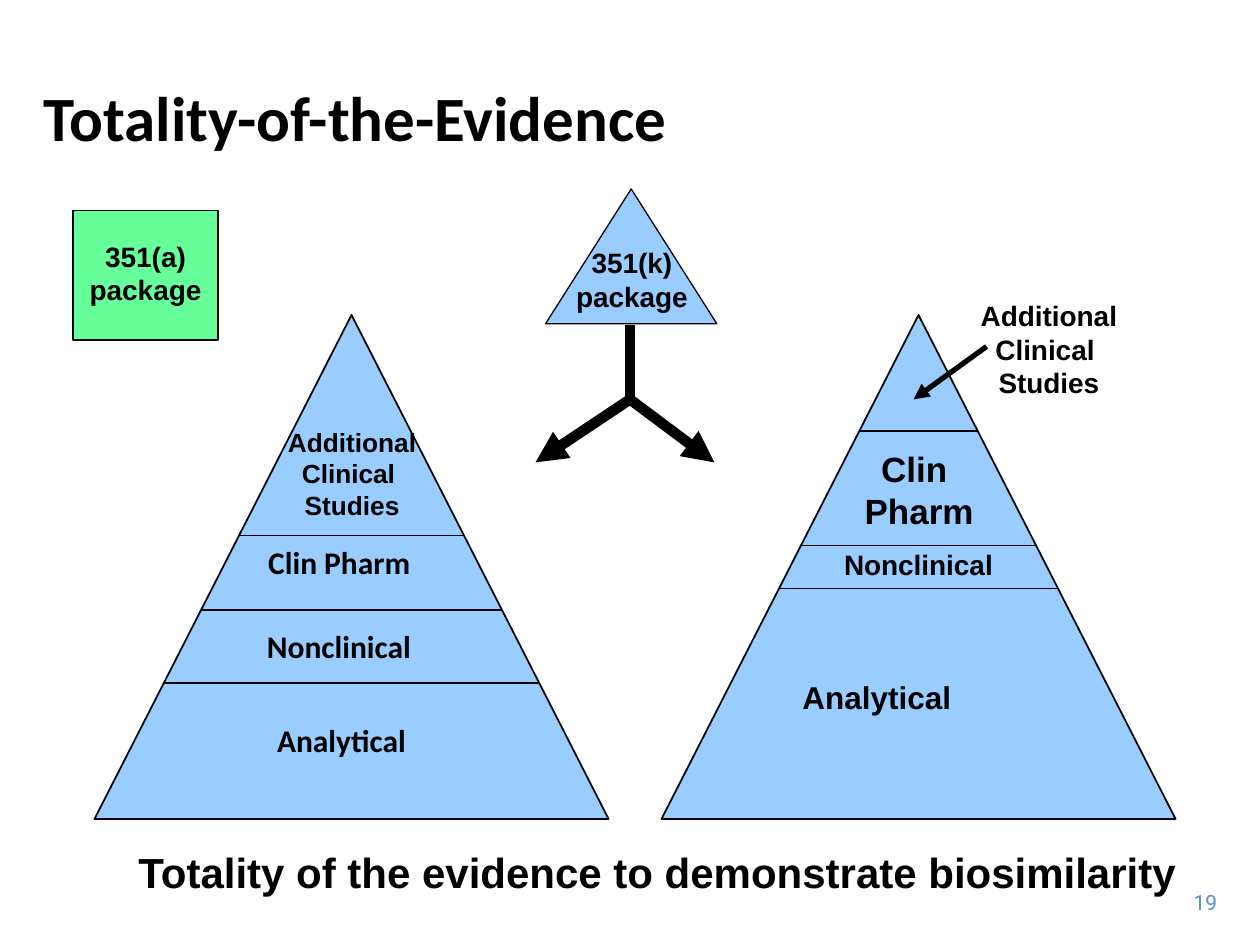
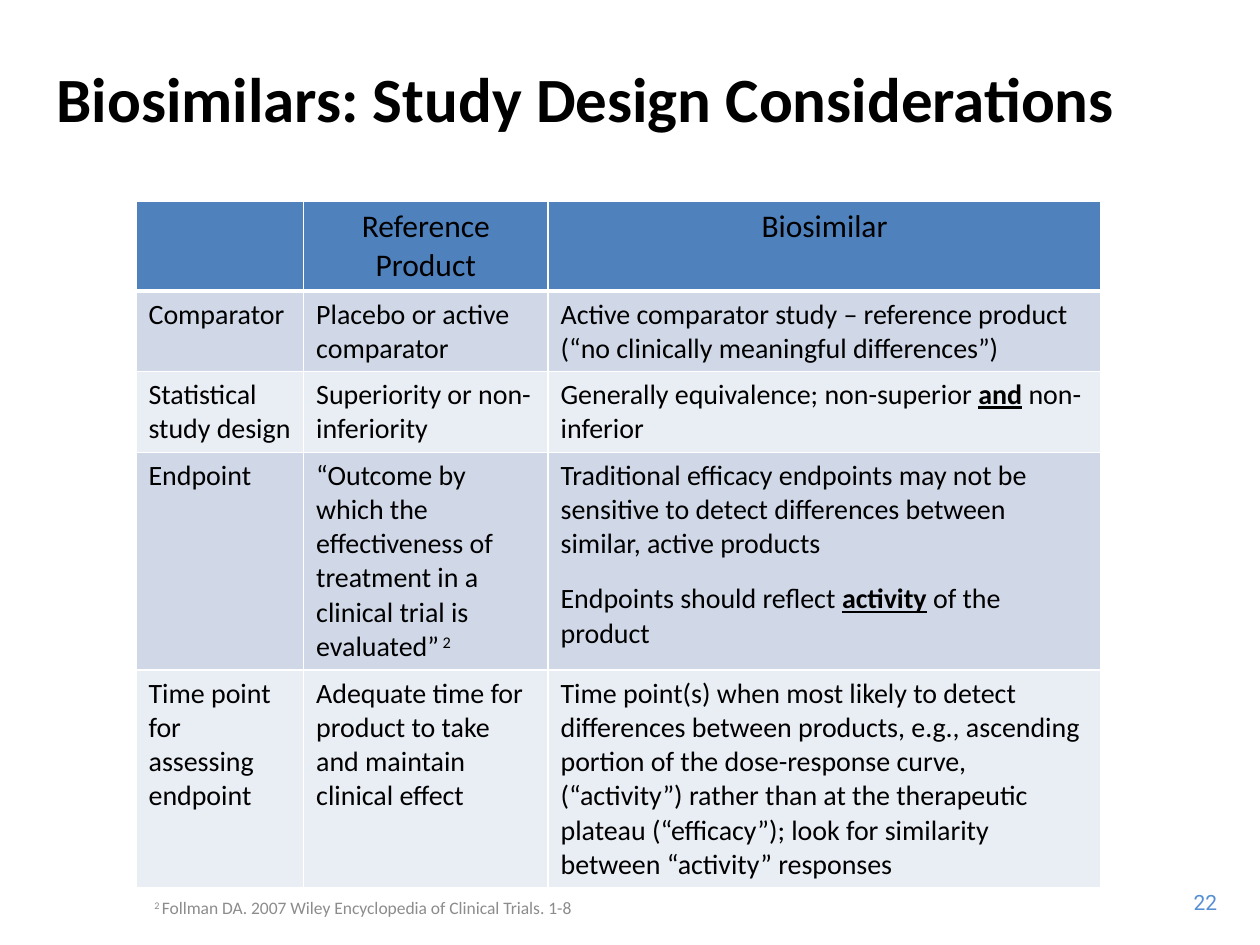
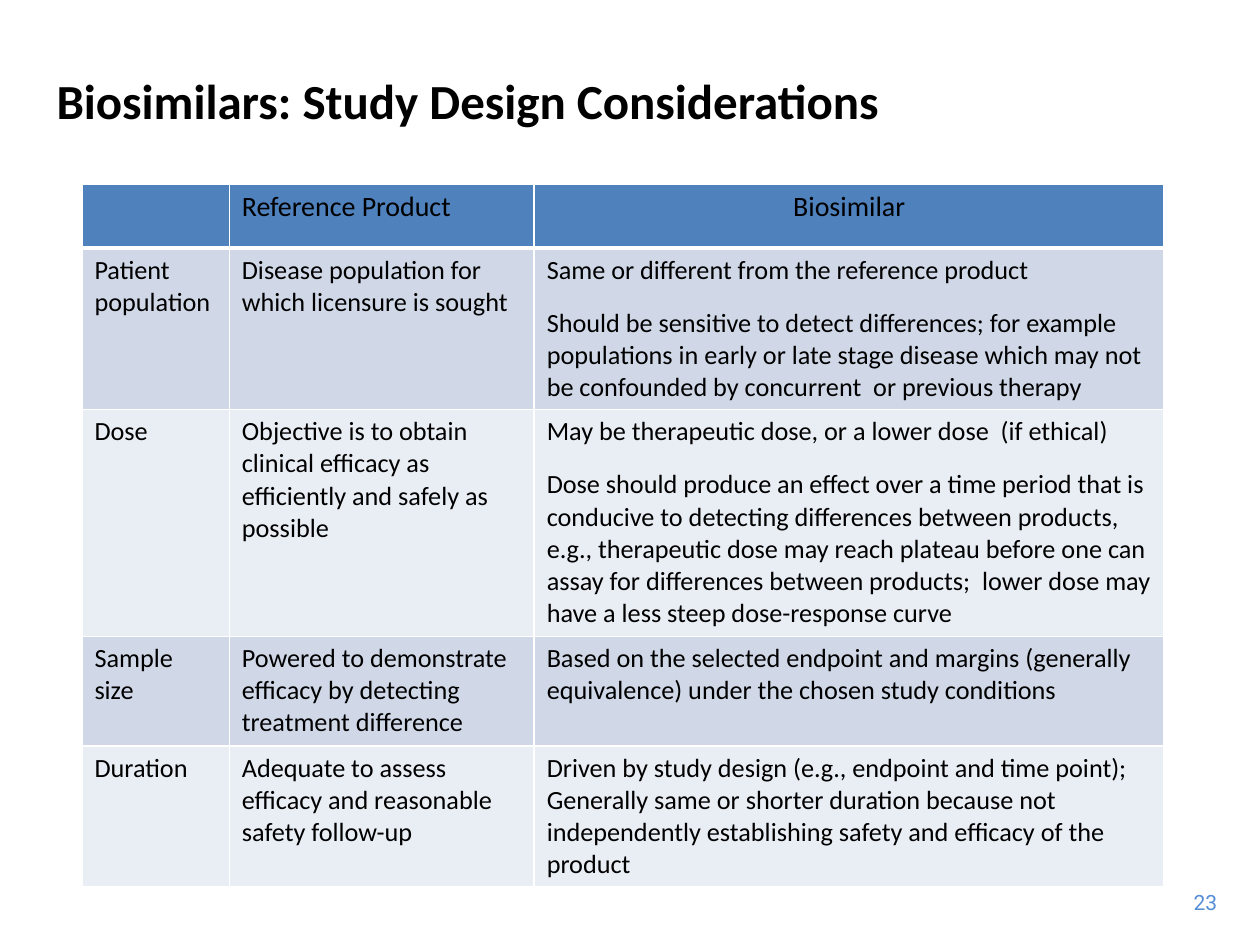
"""Build three slides on biosimilar evidence and study design."""
from dataclasses import dataclass

from lxml.etree import SubElement
from pptx import Presentation
from pptx.dml.color import RGBColor
from pptx.enum.shapes import MSO_CONNECTOR, MSO_SHAPE
from pptx.enum.text import MSO_ANCHOR, MSO_AUTO_SIZE, PP_ALIGN
from pptx.oxml import parse_xml
from pptx.oxml.ns import nsdecls, qn
from pptx.util import Inches, Pt


@dataclass(frozen=True)
class Theme:
    ink: str = "000000"
    blue: str = "99CCFF"
    green: str = "66FF99"
    head: str = "4F81BD"
    bands: tuple = ("D0D8E8", "E9EDF4")
    rule: str = "FFFFFF"
    page: str = "558ED5"
    note: str = "8C8C8C"
    sans: str = "Arial"
    body: str = "Calibri"
    digit: str = "Roboto"
    title: int = 36
    small: int = 28
    claim: int = 24
    large: int = 20
    mid: int = 18
    label: int = 16
    tight: int = 15
    foot: int = 12
    cite: int = 10


T = Theme()
LEFT, MID, RIGHT = PP_ALIGN.LEFT, PP_ALIGN.CENTER, PP_ALIGN.RIGHT


def paint(par, text, size, face, color=T.ink, bold=False, align=LEFT):
    """Write text where *word* is stressed and ^mark^ is raised."""
    par.alignment = align
    font = par.font
    font.size, font.name, font.bold = Pt(size), face, bold
    font.color.rgb = RGBColor.from_string(color)
    for i, piece in enumerate(text.split("*")):
        for j, part in enumerate(piece.split("^")):
            if not part:
                continue
            run = par.add_run()
            run.text = part
            if i % 2:
                run.font.bold = run.font.underline = True
            if j % 2:
                run.font._element.set("baseline", "30000")


def write(frame, text, size, face, gap=0, **style):
    """Write one paragraph for each line of text."""
    for i, line in enumerate(text.split("\n")):
        par = frame.add_paragraph() if i else frame.paragraphs[0]
        if i and gap:
            par.space_before = Pt(gap)
        paint(par, line, size, face, **style)


def label(slide, box, text, size, face=T.sans, bold=True, **style):
    """Add a text box that grows with its lines."""
    frame = slide.shapes.add_textbox(*map(Inches, box)).text_frame
    frame.word_wrap = False
    frame.auto_size = MSO_AUTO_SIZE.SHAPE_TO_FIT_TEXT
    write(frame, text, size, face, bold=bold, **style)


def panel(slide, box, text, size, **style):
    """Add a wrapped text box anchored in the middle."""
    frame = slide.shapes.add_textbox(*map(Inches, box)).text_frame
    frame.word_wrap = True
    frame.vertical_anchor = MSO_ANCHOR.MIDDLE
    write(frame, text, size, T.body, **style)


def shape(slide, kind, box, color, width=0.75):
    """Add an outlined preset shape."""
    item = slide.shapes.add_shape(kind, *map(Inches, box))
    item.shadow.inherit = False
    item.fill.solid()
    item.fill.fore_color.rgb = RGBColor.from_string(color)
    item.line.color.rgb = RGBColor.from_string(T.ink)
    item.line.width = Pt(width)


def line(slide, start, end, width=1, arrow=False):
    """Add a straight line, with an arrowhead if asked."""
    item = slide.shapes.add_connector(
        MSO_CONNECTOR.STRAIGHT, *map(Inches, start + end))
    item.line.color.rgb = RGBColor.from_string(T.ink)
    item.line.width = Pt(width)
    if arrow:
        SubElement(item.line._get_or_add_ln(), qn("a:tailEnd"), type="triangle")
    SubElement(item._element.spPr, qn("a:effectLst"))


def pyramid(slide, left, cuts):
    """Add a triangle sliced by level lines at the given heights."""
    top, wide, high = 2.5, 4.08, 4
    shape(slide, MSO_SHAPE.ISOSCELES_TRIANGLE, (left, top, wide, high), T.blue, 1)
    axis = left + wide / 2
    for y in cuts:
        half = (y - top) / high * wide / 2
        line(slide, (axis - half, y), (axis + half, y))


def edge(cell, bottom):
    """Draw the rules around a cell."""
    props = cell._tc.get_or_add_tcPr()
    for i, side in enumerate("LRTB"):
        width = Pt(bottom if side == "B" else 1)
        props.insert(i, parse_xml(
            f'<a:ln{side} {nsdecls("a")} w="{width}"><a:solidFill>'
            f'<a:srgbClr val="{T.rule}"/></a:solidFill></a:ln{side}>'))


def grid(slide, spot, cols, highs, rows, sizes, aligns):
    """Add a banded table with a header row."""
    table = slide.shapes.add_table(
        len(rows), len(cols), *map(Inches, (*spot, sum(cols), sum(highs)))).table
    table.first_row = table.horz_banding = False
    for col, wide in zip(table.columns, cols):
        col.width = Inches(wide)
    for r, (texts, high) in enumerate(zip(rows, highs)):
        table.rows[r].height = Inches(high)
        for c, text in enumerate(texts):
            cell = table.cell(r, c)
            cell.fill.solid()
            cell.fill.fore_color.rgb = RGBColor.from_string(
                T.bands[(r - 1) % 2] if r else T.head)
            edge(cell, 1 if r else 3)
            write(cell.text_frame, text, sizes[min(r, 1)], T.body, gap=12,
                  align=LEFT if r else aligns[c])


def page(deck, number, title, box, size):
    """Add a blank slide with its title and page number."""
    slide = deck.slides.add_slide(deck.slide_layouts[6])
    label(slide, (9.35, 7.01, 0.41, 0.3), str(number), T.foot, T.digit,
          bold=False, color=T.page, align=RIGHT)
    panel(slide, box, title, size, bold=True)
    return slide


def proof(deck):
    """Build the slide that compares the two packages."""
    slide = page(deck, 19, "Totality-of-the-Evidence", (0.25, 0.31, 9.5, 1.23), T.title)
    shape(slide, MSO_SHAPE.RECTANGLE, (0.58, 1.67, 1.15, 1.03), T.green)
    label(slide, (0.61, 1.85, 1.09, 0.64), "351(a)\npackage", T.label, align=MID)
    shape(slide, MSO_SHAPE.ISOSCELES_TRIANGLE, (4.33, 1.5, 1.36, 1.07), T.blue)
    label(slide, (4.47, 1.9, 1.09, 0.64), "351(k)\npackage", T.label, align=MID)

    pyramid(slide, 5.25, (4.67, 4.33, 3.42))
    label(slide, (7.68, 2.32, 1.29, 0.9), "Additional\nClinical \nStudies",
          T.label, align=MID)
    line(slide, (7.83, 2.75), (7.25, 3.17), 3, True)
    label(slide, (6.27, 5.33, 2.04, 0.57), "Analytical", T.mid)
    label(slide, (6.76, 3.5, 1.07, 0.77), "Clin \nPharm", T.large, align=MID)
    label(slide, (6.6, 4.3, 1.39, 0.37), "Nonclinical", T.label)

    pyramid(slide, 0.75, (5.42, 4.84, 4.25))
    for text, left, top, wide in (("Analytical", 2.1, 5.67, 1.38),
                                  ("Clin Pharm", 2.03, 4.26, 1.52),
                                  ("Nonclinical", 2.02, 4.93, 1.53)):
        label(slide, (left, top, wide, 0.4), text, T.mid, T.body)
    label(slide, (2.16, 3.33, 1.27, 0.85), "Additional \nClinical \nStudies",
          T.tight, align=MID)

    label(slide, (1, 6.67, 8.51, 0.51),
          "Totality of the evidence to demonstrate biosimilarity", T.claim)
    fork = (5, 3.17)
    line(slide, (5, 2.58), fork, 6)
    for tip in ((4.25, 3.67), (5.67, 3.67)):
        line(slide, fork, tip, 6, True)


def design(deck):
    """Build the slide on comparator, design and endpoint."""
    slide = page(deck, 22, "Biosimilars: Study Design Considerations",
                 (0.35, 0.27, 9.31, 1.01), T.title)
    rows = (
        ("", "Reference Product", "Biosimilar"),
        ("Comparator", "Placebo or active comparator",
         "Active comparator study – reference product "
         "(“no clinically meaningful differences”)"),
        ("Statistical study design", "Superiority or non-inferiority",
         "Generally equivalence; non-superior *and* non-inferior"),
        ("Endpoint",
         "“Outcome by which the effectiveness of treatment in a "
         "clinical trial is evaluated”^ 2^",
         "Traditional efficacy endpoints may not be sensitive to detect "
         "differences between similar, active products\n"
         "Endpoints should reflect *activity* of the product"),
        ("Time point for assessing endpoint",
         "Adequate time for product to take and maintain clinical effect",
         "Time point(s) when most likely to detect differences between "
         "products, e.g., ascending portion of the dose-response curve, "
         "(“activity”) rather than at the therapeutic plateau (“efficacy”); "
         "look for similarity between “activity” responses"),
    )
    grid(slide, (1.08, 1.6), (1.33, 1.94, 4.39), (0.71, 0.64, 0.64, 1.73, 1.73),
         rows, (T.mid, T.label), (LEFT, MID, MID))
    panel(slide, (0.17, 7.08, 5.42, 0.25),
          "^2 ^Follman DA. 2007 Wiley Encyclopedia of Clinical Trials. 1-8",
          T.cite, color=T.note, align=MID)


def sample(deck):
    """Build the slide on population, dose, size and duration."""
    slide = page(deck, 23, "Biosimilars: Study Design Considerations",
                 (0.35, 0.29, 9.31, 1.01), T.small)
    rows = (
        ("", "Reference Product", "Biosimilar"),
        ("Patient population", "Disease population for which licensure is sought",
         "Same or different from the reference product\n"
         "Should be sensitive to detect differences; for example populations "
         "in early or late stage disease which may not be confounded by "
         "concurrent  or previous therapy"),
        ("Dose",
         "Objective is to obtain clinical efficacy as efficiently and "
         "safely as possible",
         "May be therapeutic dose, or a lower dose  (if ethical)\n"
         "Dose should produce an effect over a time period that is conducive "
         "to detecting differences between products, e.g., therapeutic dose "
         "may reach plateau before one can assay for differences between "
         "products;  lower dose may have a less steep dose-response curve"),
        ("Sample size",
         "Powered to demonstrate efficacy by detecting treatment difference",
         "Based on the selected endpoint and margins (generally equivalence) "
         "under the chosen study conditions"),
        ("Duration", "Adequate to assess efficacy and reasonable safety follow-up",
         "Driven by study design (e.g., endpoint and time point); Generally "
         "same or shorter duration because not independently establishing "
         "safety and efficacy of the product"),
    )
    grid(slide, (0.65, 1.46), (1.17, 2.42, 5), (0.51, 1.28, 1.8, 0.87, 1.12),
         rows, (T.label, T.tight), (LEFT, LEFT, MID))


def main():
    """Build and save the deck."""
    deck = Presentation()
    deck.slide_width, deck.slide_height = Inches(10), Inches(7.5)
    proof(deck)
    design(deck)
    sample(deck)
    deck.save("out.pptx")


if __name__ == "__main__":
    main()
